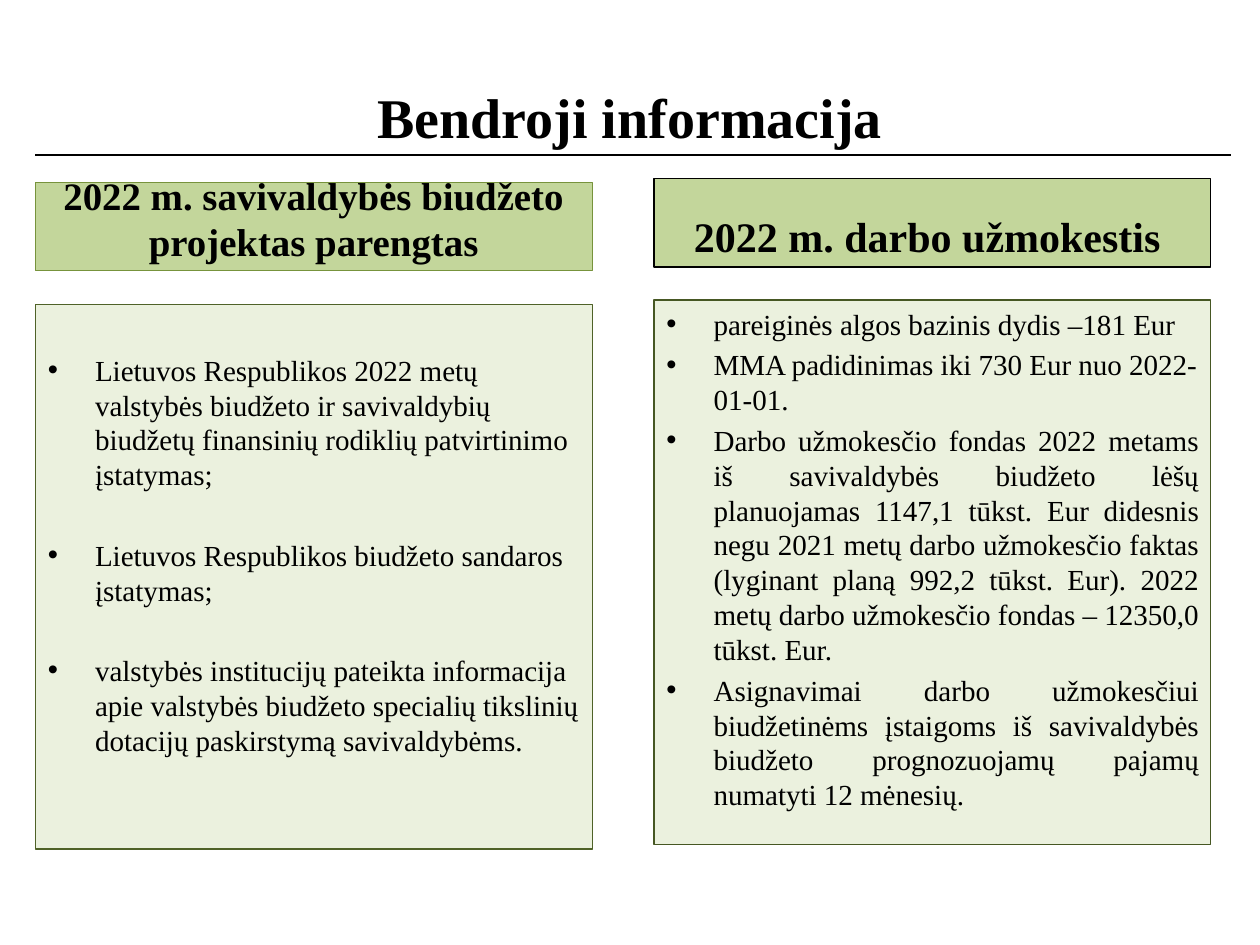
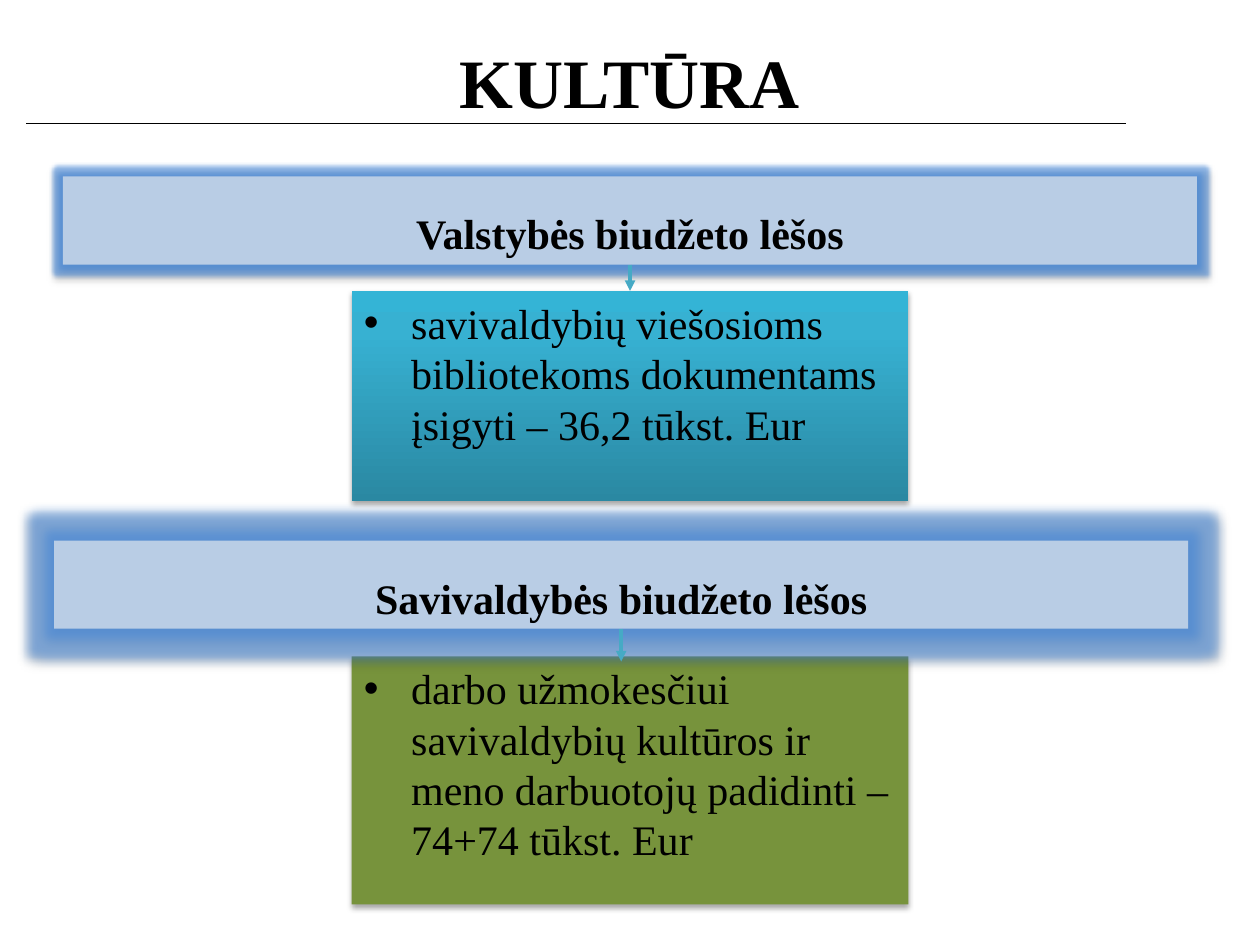
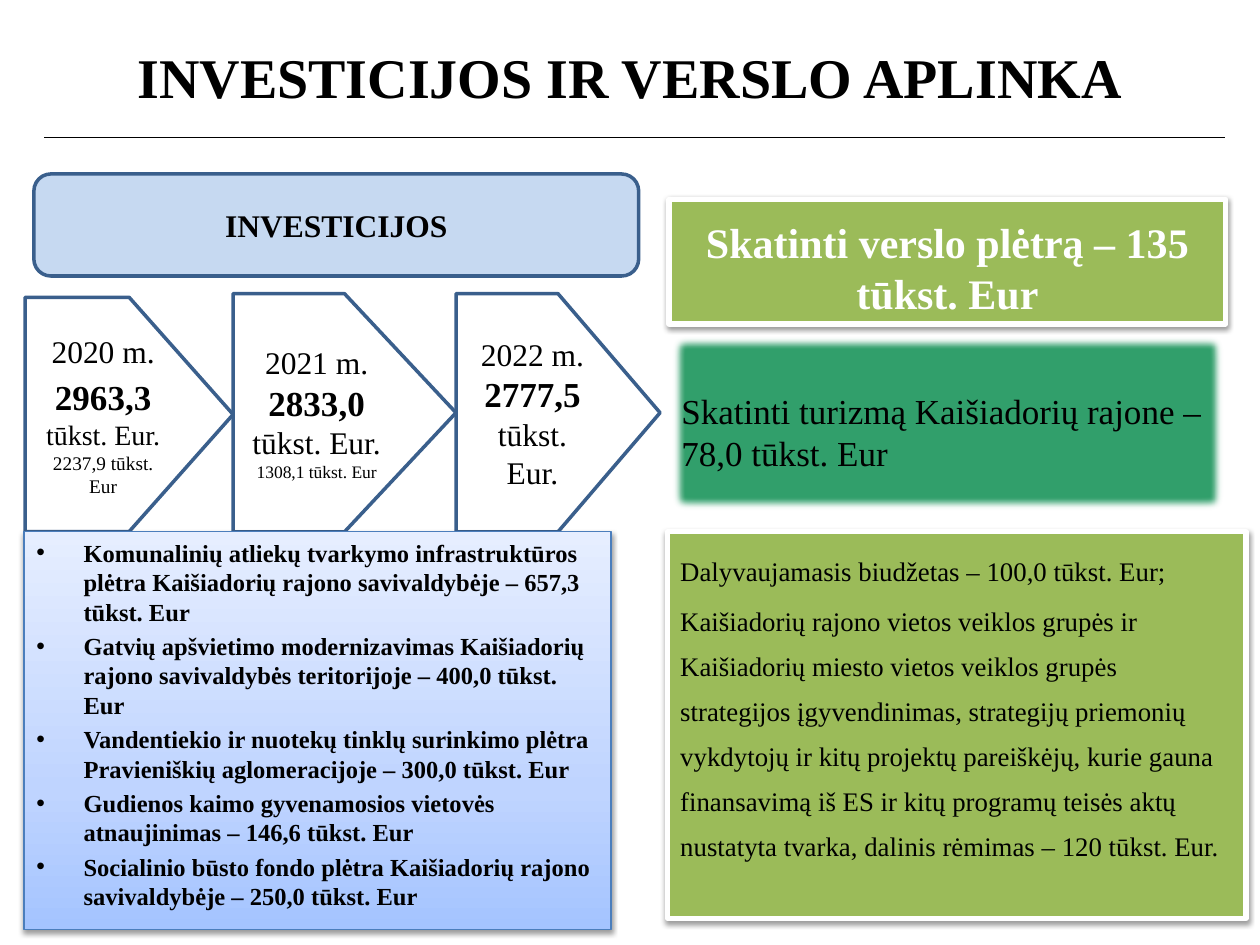
import copy

import pptx
import pptx.dml.color
import pptx.enum.shapes
import pptx.enum.text
import pptx.oxml.ns
import pptx.util
from lxml import etree

Pt = pptx.util.Pt
RGBColor = pptx.dml.color.RGBColor
Shape = pptx.enum.shapes.MSO_SHAPE
Anchor = pptx.enum.text.MSO_ANCHOR
Align = pptx.enum.text.PP_ALIGN
qn = pptx.oxml.ns.qn

FONT = "Times New Roman"
BLACK = RGBColor(0x00, 0x00, 0x00)
WHITE = RGBColor(0xFF, 0xFF, 0xFF)
SAGE = RGBColor(0xC3, 0xD6, 0x9B)
PALE_SAGE = RGBColor(0xEB, 0xF1, 0xDE)
OLIVE = RGBColor(0x77, 0x93, 0x3C)
DARK_OLIVE = RGBColor(0x4F, 0x62, 0x28)
MOSS = RGBColor(0x46, 0x57, 0x23)
LIME = RGBColor(0x9B, 0xBB, 0x59)
EMERALD = RGBColor(0x31, 0x9F, 0x6B)
STEEL = RGBColor(0xB9, 0xCD, 0xE5)
ICE = RGBColor(0xC6, 0xD9, 0xF1)
NAVY = RGBColor(0x3A, 0x5F, 0x8C)
BLUE = RGBColor(0x4B, 0x7E, 0xBC)
GLOW = RGBColor(0x4A, 0x8A, 0xD8)
TEAL = RGBColor(0x46, 0xAA, 0xC5)
# Gradient stops run from the bottom edge up.
TEAL_FADE = [(0, RGBColor(0x2A, 0x88, 0xA2)), (0.8, RGBColor(0x37, 0xB1, 0xD2)),
             (1, RGBColor(0x34, 0xB4, 0xD6))]
BLUE_FADE = [(0, RGBColor(0xA4, 0xC4, 0xFF)), (0.35, RGBColor(0xBF, 0xD4, 0xFF)),
             (1, RGBColor(0xE6, 0xEE, 0xFF))]

# Shared box styles; frames are left, top, width, height in points.
HEADING = dict(size=24, bold=True, align=Align.CENTER, anchor=Anchor.BOTTOM)
SAGE_HEADING = dict(HEADING, fill=SAGE)
SAGE_LIST = dict(fill=PALE_SAGE, size=16.6, bullets=True)
FUND_BAND = dict(HEADING, fill=STEEL, shadow=(1.8, 35))
FUND_LIST = dict(size=24, bullets=True, shadow=(1.8, 35))
FRAMED = dict(fill=LIME, line=(WHITE, 3), shadow=(1.6, 38))
YEAR = dict(kind=Shape.PENTAGON, line=(NAVY, 2), size=18, align=Align.CENTER, anchor=Anchor.MIDDLE)

GENERAL = dict(
    title=("Bendroji informacija", (36, 21.6, 648, 90), 32),
    rule=(20.2, 703.4, 88.6),
    boxes=[
        dict(SAGE_HEADING, frame=(20.2, 104.4, 318.2, 50.4), line=(OLIVE, 0.75), size=22.2,
             text=["2022 m. savivaldybės biudžeto projektas parengtas"]),
        dict(SAGE_LIST, frame=(20.2, 174.2, 318.2, 311), line=(DARK_OLIVE, 0.75),
             top_inset=27, before=26,
             text=["Lietuvos Respublikos 2022 metų valstybės biudžeto ir savivaldybių biudžetų "
                   "finansinių rodiklių patvirtinimo įstatymas;",
                   "Lietuvos Respublikos biudžeto sandaros įstatymas;",
                   "valstybės institucijų pateikta informacija apie valstybės biudžeto specialių "
                   "tikslinių dotacijų paskirstymą savivaldybėms."]),
        dict(SAGE_LIST, frame=(373.7, 171.4, 318.2, 311), line=(MOSS, 0.75), justify_from=2,
             text=["pareiginės algos bazinis dydis –181 Eur",
                   "MMA padidinimas iki 730 Eur nuo 2022-01-01.",
                   "Darbo užmokesčio fondas 2022 metams iš savivaldybės biudžeto lėšų planuojamas "
                   "1147,1 tūkst. Eur didesnis negu 2021 metų darbo užmokesčio faktas (lyginant "
                   "planą 992,2 tūkst. Eur). 2022 metų darbo užmokesčio fondas – 12350,0 tūkst. Eur. ",
                   "Asignavimai darbo užmokesčiui biudžetinėms įstaigoms iš savivaldybės biudžeto "
                   "prognozuojamų pajamų numatyti 12 mėnesių."]),
        dict(SAGE_HEADING, frame=(373.7, 102.2, 318.2, 50.4), line=(BLACK, 0.75),
             text=["2022 m. darbo užmokestis "]),
    ])

CULTURE = dict(
    title=("KULTŪRA", (36, 21.6, 648, 49), 39.6),
    rule=(15.1, 643.7, 70.6),
    boxes=[
        dict(FUND_LIST, frame=(200.9, 166.3, 318.2, 120.2), fill=TEAL_FADE,
             text=["savivaldybių viešosioms bibliotekoms dokumentams įsigyti – 36,2 tūkst. Eur"]),
        dict(FUND_BAND, frame=(36, 100.8, 648, 50.4), glow=5, text=["Valstybės biudžeto lėšos"]),
        dict(FUND_LIST, frame=(200.9, 375.1, 318.2, 141.8), fill=OLIVE,
             text=["darbo užmokesčiui savivaldybių kultūros ir meno darbuotojų padidinti – "
                   "74+74 tūkst. Eur"]),
        dict(FUND_BAND, frame=(31, 308.9, 648, 50.4), glow=11, text=["Savivaldybės biudžeto lėšos"]),
    ])

INVESTMENT = dict(
    title=("INVESTICIJOS IR VERSLO APLINKA", (36, 21.6, 648, 44), 32),
    rule=(25.2, 699.8, 78.5),
    boxes=[
        dict(HEADING, **FRAMED, frame=(382.3, 113.8, 318.2, 71.3), color=WHITE,
             text=["Skatinti verslo plėtrą – 135 tūkst. Eur"]),
        dict(frame=(382.3, 190.8, 318.2, 102.2), fill=EMERALD, soft_edge=5, size=20, top_inset=31.6,
             text=["Skatinti turizmą Kaišiadorių rajone – 78,0 tūkst. Eur"]),
        dict(kind=Shape.ROUNDED_RECTANGLE, frame=(19.4, 99.4, 345.6, 58.3), fill=ICE, line=(NAVY, 2),
             size=18, bold=True, align=Align.CENTER, anchor=Anchor.MIDDLE, text=["INVESTICIJOS"]),
        dict(YEAR, frame=(14.4, 169.9, 118.8, 133.9),
             text=["2020 m.", [("2963,3", 20, True), (" tūkst. Eur. ", 16, False),
                               ("2237,9 tūkst. Eur", 11, False)]]),
        dict(YEAR, frame=(133.2, 167.8, 127.4, 136.1), before=0,
             text=["2021 m.", [("2833,0 ", 20, True), ("tūkst. Eur.", 18, False)],
                   [("1308,1 tūkst. Eur", 10, False)]]),
        dict(YEAR, frame=(260.6, 167.8, 116.6, 136.1), before=0,
             text=["2022 m.", [("2777,5 ", 20, True), ("tūkst. Eur.", 18, False)]]),
        dict(frame=(13.7, 303.8, 335.5, 227.5), fill=BLUE_FADE, line=(BLUE, 0.75), shadow=(1.6, 38),
             size=14, bold=True, bullets=True,
             text=["Komunalinių atliekų tvarkymo infrastruktūros plėtra Kaišiadorių rajono "
                   "savivaldybėje – 657,3 tūkst. Eur",
                   "Gatvių apšvietimo modernizavimas Kaišiadorių rajono savivaldybės teritorijoje – "
                   "400,0 tūkst. Eur",
                   "Vandentiekio ir nuotekų tinklų surinkimo plėtra Pravieniškių aglomeracijoje – "
                   "300,0 tūkst. Eur",
                   "Gudienos kaimo gyvenamosios vietovės atnaujinimas – 146,6 tūkst. Eur",
                   "Socialinio būsto fondo plėtra Kaišiadorių rajono savivaldybėje – 250,0 tūkst. Eur"]),
        dict(FRAMED, frame=(381.6, 303.8, 330.5, 221), size=15.3, anchor=Anchor.BOTTOM,
             bottom_inset=32, line_spacing=1.4,
             text=["Dalyvaujamasis biudžetas – 100,0 tūkst. Eur;",
                   "Kaišiadorių rajono vietos veiklos grupės ir Kaišiadorių miesto vietos veiklos "
                   "grupės strategijos įgyvendinimas, strategijų priemonių vykdytojų ir kitų projektų "
                   "pareiškėjų, kurie gauna finansavimą iš ES ir kitų programų teisės aktų nustatyta "
                   "tvarka, dalinis rėmimas – 120 tūkst. Eur."]),
    ])


def set_font(font, size, bold, color):
    font.name = FONT
    font.size = Pt(size)
    font.bold = bold
    font.color.rgb = color


def add_effect(shape, tag, color=None, alpha=100, **lengths):
    """Append one effect to the shape's effect list, which must exist."""
    effects = shape._element.spPr.find(qn("a:effectLst"))
    effect = etree.SubElement(effects, qn(tag), {k: str(int(v)) for k, v in lengths.items()})
    if color is not None:
        tint = etree.SubElement(effect, qn("a:srgbClr"), val=str(color))
        etree.SubElement(tint, qn("a:alpha"), val=str(alpha * 1000))


def paint(shape, fill):
    if fill is None:
        shape.fill.background()
    elif isinstance(fill, RGBColor):
        shape.fill.solid()
        shape.fill.fore_color.rgb = fill
    else:
        shape.fill.gradient()
        shape.fill.gradient_angle = 90
        stop_list = shape._element.spPr.find(qn("a:gradFill")).find(qn("a:gsLst"))
        stop_list.append(copy.deepcopy(stop_list[0]))
        for stop, (position, color) in zip(shape.fill.gradient_stops, fill):
            stop.position = position
            stop.color.rgb = color


def add_bullet(para):
    props = para._p.get_or_add_pPr()
    props.set("marL", str(Pt(27)))
    props.set("indent", str(-Pt(27)))
    etree.SubElement(props, qn("a:buFont"), typeface="Arial")
    etree.SubElement(props, qn("a:buChar"), char="•")


def add_box(page, frame, text, size, kind=Shape.RECTANGLE, fill=None, line=None, shadow=None,
            glow=None, soft_edge=None, bold=False, color=BLACK, align=Align.LEFT,
            anchor=Anchor.TOP, bullets=False, justify_from=None, before=None,
            line_spacing=None, top_inset=3.6, bottom_inset=3.6):
    """Draw a filled shape with text; a paragraph is a string or (text, size, bold) runs."""
    box = page.shapes.add_shape(kind, *map(Pt, frame))
    box.shadow.inherit = False
    paint(box, fill)
    if line:
        box.line.color.rgb = line[0]
        box.line.width = Pt(line[1])
    else:
        box.line.fill.background()
    if glow:
        add_effect(box, "a:glow", GLOW, 60, rad=Pt(glow))
    if shadow:
        distance, alpha = shadow
        add_effect(box, "a:outerShdw", BLACK, alpha, blurRad=Pt(3.1), dist=Pt(distance), dir=5400000)
    if soft_edge:
        add_effect(box, "a:softEdge", rad=Pt(soft_edge))

    frame_text = box.text_frame
    frame_text.word_wrap = True
    frame_text.vertical_anchor = anchor
    frame_text.margin_top = Pt(top_inset)
    frame_text.margin_bottom = Pt(bottom_inset)
    for index, content in enumerate(text):
        para = frame_text.paragraphs[0] if index == 0 else frame_text.add_paragraph()
        justified = justify_from is not None and index >= justify_from
        para.alignment = Align.JUSTIFY if justified else align
        para.space_before = Pt(round(size * 0.2, 1) if before is None else before)
        if line_spacing:
            para.line_spacing = line_spacing
        if bullets:
            add_bullet(para)
        set_font(para.font, size, bold, color)
        runs = [(content, None, None)] if isinstance(content, str) else content
        for words, run_size, run_bold in runs:
            span = para.add_run()
            span.text = words
            if run_size:
                set_font(span.font, run_size, run_bold, color)
    return box


def add_line(page, start, end, color=BLACK, width=0.75, arrow=False):
    line = page.shapes.add_connector(pptx.enum.shapes.MSO_CONNECTOR.STRAIGHT,
                                     *map(Pt, start + end))
    line.line.color.rgb = color
    line.line.width = Pt(width)
    if arrow:
        etree.SubElement(line.line._get_or_add_ln(), qn("a:tailEnd"), type="triangle")
    etree.SubElement(line._element.spPr, qn("a:effectLst"))
    return line


def add_page(deck, title, rule, boxes):
    """Add a titled slide with its rule and boxes; return the slide and the boxes."""
    page = deck.slides.add_slide(deck.slide_layouts[5])
    words, frame, size = title
    heading = page.shapes.title
    heading.left, heading.top, heading.width, heading.height = map(Pt, frame)
    heading.text_frame.text = words
    heading.text_frame.vertical_anchor = Anchor.MIDDLE
    para = heading.text_frame.paragraphs[0]
    para.alignment = Align.CENTER
    set_font(para.font, size, True, BLACK)
    left, right, height = rule
    add_line(page, (left, height), (right, height))
    return page, [add_box(page, **box) for box in boxes]


def main():
    deck = pptx.Presentation()
    deck.slide_width, deck.slide_height = Pt(720), Pt(540)
    add_page(deck, **GENERAL)

    page, (state_list, state_band, _, local_band) = add_page(deck, **CULTURE)
    state_arrow = add_line(page, (360, 151.2), (360, 166.3), TEAL, 2, arrow=True)
    state_arrow.begin_connect(state_band, 2)
    state_arrow.end_connect(state_list, 0)
    local_arrow = add_line(page, (355, 359.3), (355, 378), TEAL, 2, arrow=True)
    local_arrow.begin_connect(local_band, 2)

    add_page(deck, **INVESTMENT)
    deck.save("out.pptx")


if __name__ == "__main__":
    main()
